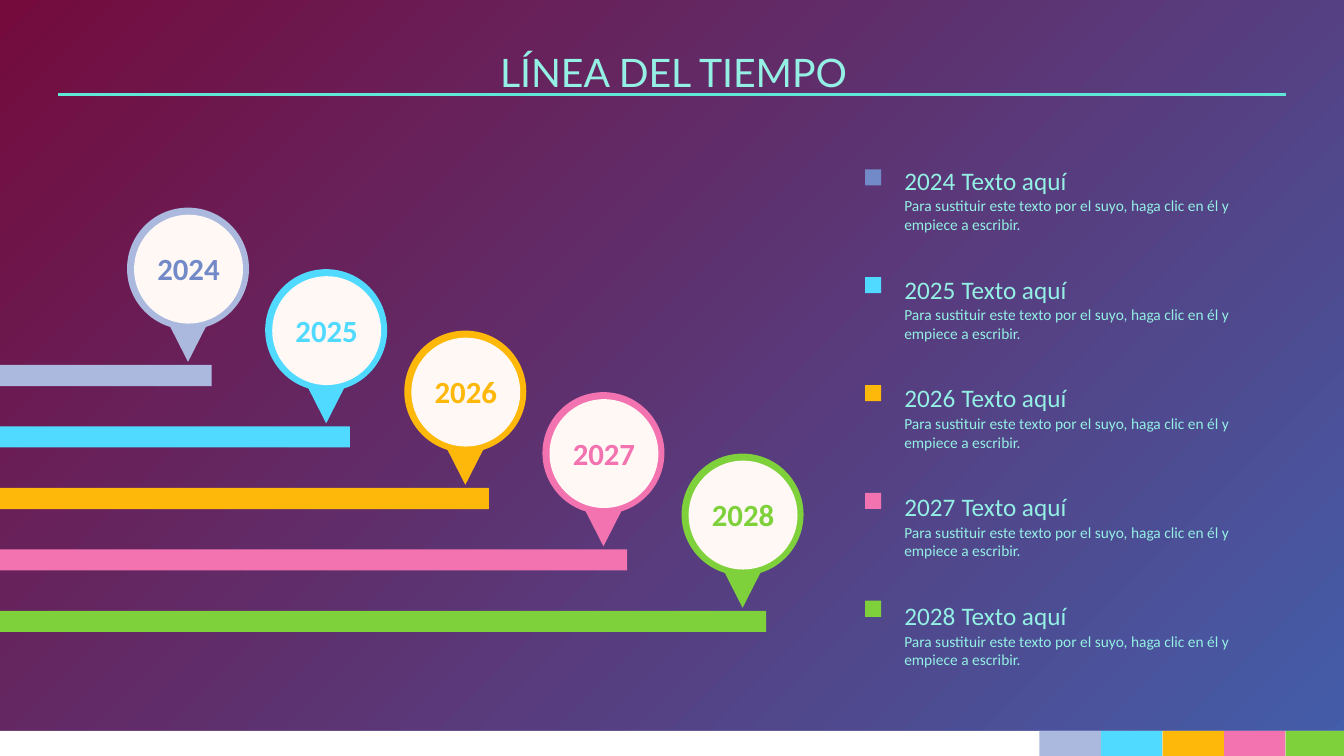
from dataclasses import dataclass

from lxml.etree import SubElement
from pptx import Presentation
from pptx.dml.color import RGBColor
from pptx.enum.shapes import MSO_CONNECTOR, MSO_SHAPE
from pptx.enum.text import MSO_ANCHOR, MSO_AUTO_SIZE, PP_ALIGN
from pptx.oxml.ns import qn
from pptx.util import Emu, Pt


@dataclass(frozen=True)
class Theme:
    bg_start: str = "750B3D"
    bg_end: str = "435EAA"
    text: str = "94F0E4"
    rule: str = "5FE8D6"
    disc: str = "FFF8F5"
    footer: str = "FFFFFF"
    periwinkle: str = "738AC8"
    series: tuple = ("ABB9DE", "51DAFF", "FEB80A", "F273AF", "7FD13B")
    title_font: str = "Lato"
    body_font: str = "Calibri"
    title_size: int = 28
    year_size: int = 22
    gap_size: int = 20
    heading_size: int = 18
    detail_size: int = 11


THEME = Theme()
LABEL_COLORS = (THEME.periwinkle,) + THEME.series[1:]
YEARS = ("2024", "2025", "2026", "2027", "2028")
HEADING = "Texto aquí"
DETAIL = "Para sustituir este texto por el suyo, haga clic en él y empiece a escribir."
SLIDE_W, SLIDE_H = 1333, 750


def px(n):
    return Emu(n * 9144)


def box(x, y, w, h):
    return px(x), px(y), px(w), px(h)


def add_solid(shapes, kind, x, y, w, h, color):
    sp = shapes.add_shape(kind, *box(x, y, w, h))
    sp.shadow.inherit = False
    sp.fill.solid()
    sp.fill.fore_color.rgb = RGBColor.from_string(color)
    sp.line.fill.background()
    return sp


def add_run(p, text, size, color=THEME.text, bold=False, font=THEME.body_font):
    r = p.add_run()
    r.text = text
    r.font.name = font
    r.font.size = Pt(size)
    r.font.bold = bold
    r.font.color.rgb = RGBColor.from_string(color)


def add_text(shapes, x, y, w, h, align=PP_ALIGN.LEFT):
    tf = shapes.add_textbox(*box(x, y, w, h)).text_frame
    tf.word_wrap = True
    tf.auto_size = MSO_AUTO_SIZE.SHAPE_TO_FIT_TEXT
    p = tf.paragraphs[0]
    p.alignment = align
    return p


def set_background(slide):
    fill = slide.background.fill
    fill.gradient()
    fill.gradient_angle = 315
    for stop, color, position in zip(fill.gradient_stops, (THEME.bg_start, THEME.bg_end), (0, 1)):
        stop.color.rgb = RGBColor.from_string(color)
        stop.position = position


def add_header(slide, x, y, w, h):
    title = slide.shapes.title
    title.left, title.top, title.width, title.height = box(x, y, w, h)
    tf = title.text_frame
    tf.word_wrap = True
    tf.auto_size = MSO_AUTO_SIZE.SHAPE_TO_FIT_TEXT
    tf.vertical_anchor = MSO_ANCHOR.TOP
    p = tf.paragraphs[0]
    p.alignment = PP_ALIGN.CENTER
    add_run(p, "LÍNEA DEL TIEMPO", THEME.title_size, font=THEME.title_font)

    rule_y = px(y + 51)
    rule = slide.shapes.add_connector(
        MSO_CONNECTOR.STRAIGHT, px(x + 58), rule_y, px(x + w - 61), rule_y)
    rule.line.color.rgb = RGBColor.from_string(THEME.rule)
    rule.line.width = Pt(2)
    SubElement(rule._element.spPr, qn("a:effectLst"))


def add_pin(shapes, x, y, size, year, color, label_color):
    add_solid(shapes, MSO_SHAPE.OVAL, x, y, size, size, color)
    add_solid(shapes, MSO_SHAPE.FLOWCHART_MERGE, x + 31, y + 95, 59, 58, color)
    disc = size - 13
    add_solid(shapes, MSO_SHAPE.OVAL, x + 7, y + 7, disc, disc, THEME.disc)
    p = add_text(shapes, x + 7, y + 37, disc, 47, PP_ALIGN.CENTER)
    add_run(p, year, THEME.year_size, label_color, bold=True)


def add_timeline(slide, x, y):
    for i, (year, color, label_color) in enumerate(zip(YEARS, THEME.series, LABEL_COLORS)):
        pin_x, pin_y = x + 126 + 275 * i // 2, y + 61 * i
        add_solid(slide.shapes, MSO_SHAPE.RECTANGLE, x, pin_y + 156, pin_x + 84 - x, 21, color)
        add_pin(slide.shapes, pin_x, pin_y, 121, year, color, label_color)


def add_legend(slide, x, y, w):
    for i, (year, color) in enumerate(zip(YEARS, LABEL_COLORS)):
        add_solid(slide.shapes, MSO_SHAPE.RECTANGLE, x, y + 12 + 107 * i, 16, 16, color)
        item = slide.shapes.add_group_shape().shapes
        text_x, text_y, text_w = x + 29, y + 108 * i, w - 29
        p = add_text(item, text_x, text_y, text_w, 40)
        add_run(p, year, THEME.heading_size)
        add_run(p, " ", THEME.gap_size, bold=True)
        add_run(p, HEADING, THEME.heading_size)
        p = add_text(item, text_x, text_y + 34, text_w - 8, 47)
        add_run(p, DETAIL, THEME.detail_size)


def add_footer(slide, x, y, w, h):
    add_solid(slide.shapes, MSO_SHAPE.RECTANGLE, x, y, w, h, THEME.footer)
    swatch = 61
    start = x + w - swatch * len(THEME.series)
    for i, color in enumerate(THEME.series):
        add_solid(slide.shapes, MSO_SHAPE.RECTANGLE, start + swatch * i, y, swatch, h, color)


def main():
    prs = Presentation()
    prs.slide_width, prs.slide_height = px(SLIDE_W), px(SLIDE_H)
    slide = prs.slides.add_slide(prs.slide_layouts[5])
    set_background(slide)
    add_header(slide, 0, 43, 1336, 57)
    add_timeline(slide, 0, 206)
    add_legend(slide, 858, 156, 418)
    add_footer(slide, 0, 725, 1336, 28)
    prs.save("out.pptx")


if __name__ == "__main__":
    main()
